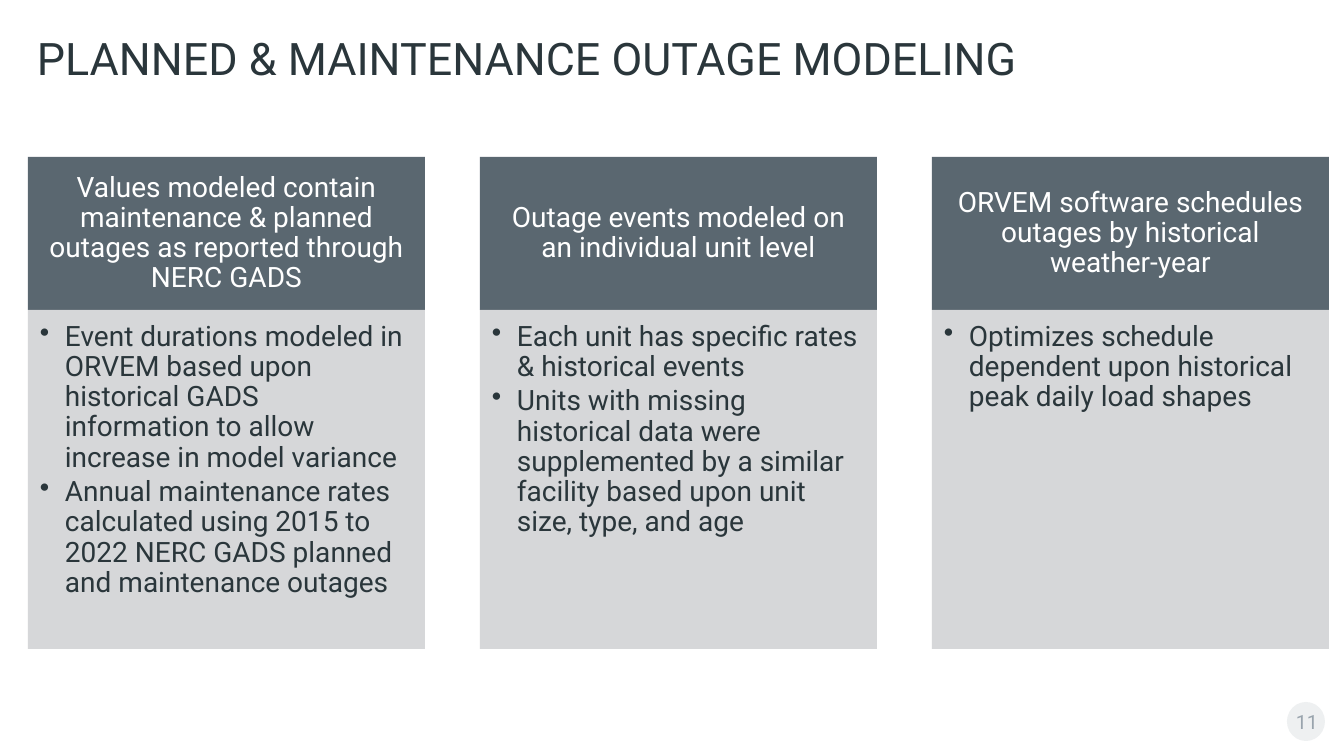
from lxml import etree
from pptx import Presentation
from pptx.dml.color import RGBColor
from pptx.enum.shapes import MSO_SHAPE
from pptx.enum.text import MSO_ANCHOR, PP_ALIGN
from pptx.oxml.ns import qn
from pptx.util import Pt

RECT, OVAL = MSO_SHAPE.RECTANGLE, MSO_SHAPE.OVAL
TOP, MID, LOW = MSO_ANCHOR.TOP, MSO_ANCHOR.MIDDLE, MSO_ANCHOR.BOTTOM
LEFT, CENTER = PP_ALIGN.LEFT, PP_ALIGN.CENTER
SCALE = 914400 / 100.8
COLORS = {"ink": "2A363B", "slate": "5A6770", "panel": "D2D3D5",
          "white": "FFFFFF", "badge": "EEF0F1", "page": "99A4AD"}


def block(kind, box, fill=None):
    dims = [round(n * SCALE) for n in box]
    if kind is None:
        return slide.shapes.add_textbox(*dims)
    shape = slide.shapes.add_shape(kind, *dims)
    shape.shadow.inherit = False
    shape.fill.solid()
    shape.fill.fore_color.rgb = RGBColor.from_string(COLORS[fill])
    shape.line.fill.background()
    return shape


def write(shape, lines, size, color, pads, anchor, align, pitch, after=0, bullet=False):
    frame = shape.text_frame
    frame.word_wrap = True
    frame.vertical_anchor = anchor
    (frame.margin_left, frame.margin_top,
     frame.margin_right, frame.margin_bottom) = [round(n * SCALE) for n in pads]
    for i, line in enumerate(lines):
        para = frame.add_paragraph() if i else frame.paragraphs[0]
        para.alignment = align
        para.line_spacing = pitch
        para.space_after = Pt(after)
        if bullet:
            props = para._p.get_or_add_pPr()
            indent = round(25 * SCALE)
            props.set("marL", str(indent))
            props.set("indent", str(-indent))
            etree.SubElement(props, qn("a:buChar"), char="•")
        run = para.add_run()
        run.text = line
        run.font.size = Pt(size)
        run.font.name = "Roboto"
        run.font.color.rgb = RGBColor.from_string(COLORS[color])


deck = Presentation()
deck.slide_width = round(1344 * SCALE)
deck.slide_height = round(756 * SCALE)
slide = deck.slides.add_slide(deck.slide_layouts[6])

block(OVAL, (1287, 702, 38, 39), "badge")
write(block(None, (1287, 698, 40, 40)), ["11"], 14, "page",
      (3, 5, 3, 5), LOW, CENTER, 1.0)
write(block(None, (27, 11, 1207, 104)), ["PLANNED & MAINTENANCE OUTAGE MODELING"],
      32, "ink", (10, 5, 10, 5), MID, LEFT, 0.75)

cards = [
    ("Values modeled contain maintenance & planned outages as reported through NERC GADS",
     ["Event durations modeled in ORVEM based upon historical GADS information "
      "to allow increase in model variance",
      "Annual maintenance rates calculated using 2015 to 2022 NERC GADS planned "
      "and maintenance outages"]),
    ("Outage events modeled on an individual unit level",
     ["Each unit has specific rates & historical events",
      "Units with missing historical data were supplemented by a similar facility "
      "based upon unit size, type, and age"]),
    ("ORVEM software schedules outages by historical weather-year",
     ["Optimizes schedule dependent upon historical peak daily load shapes"]),
]
for col, (head, points) in enumerate(cards):
    x = 28 + 452 * col
    write(block(RECT, (x, 157, 397, 153), "slate"), [head], 20, "white",
          (16, 9, 16, 9), MID, CENTER, 0.9, 7)
    panel = block(RECT, (x, 310, 397, 339), "panel")
    tint = panel.fill._xPr.find(qn("a:solidFill"))[0]
    etree.SubElement(tint, qn("a:alpha"), val="90000")
    write(panel, points, 20, "ink", (12, 12, 16, 17), TOP, LEFT, 0.9, 3, True)

deck.save("out.pptx")
